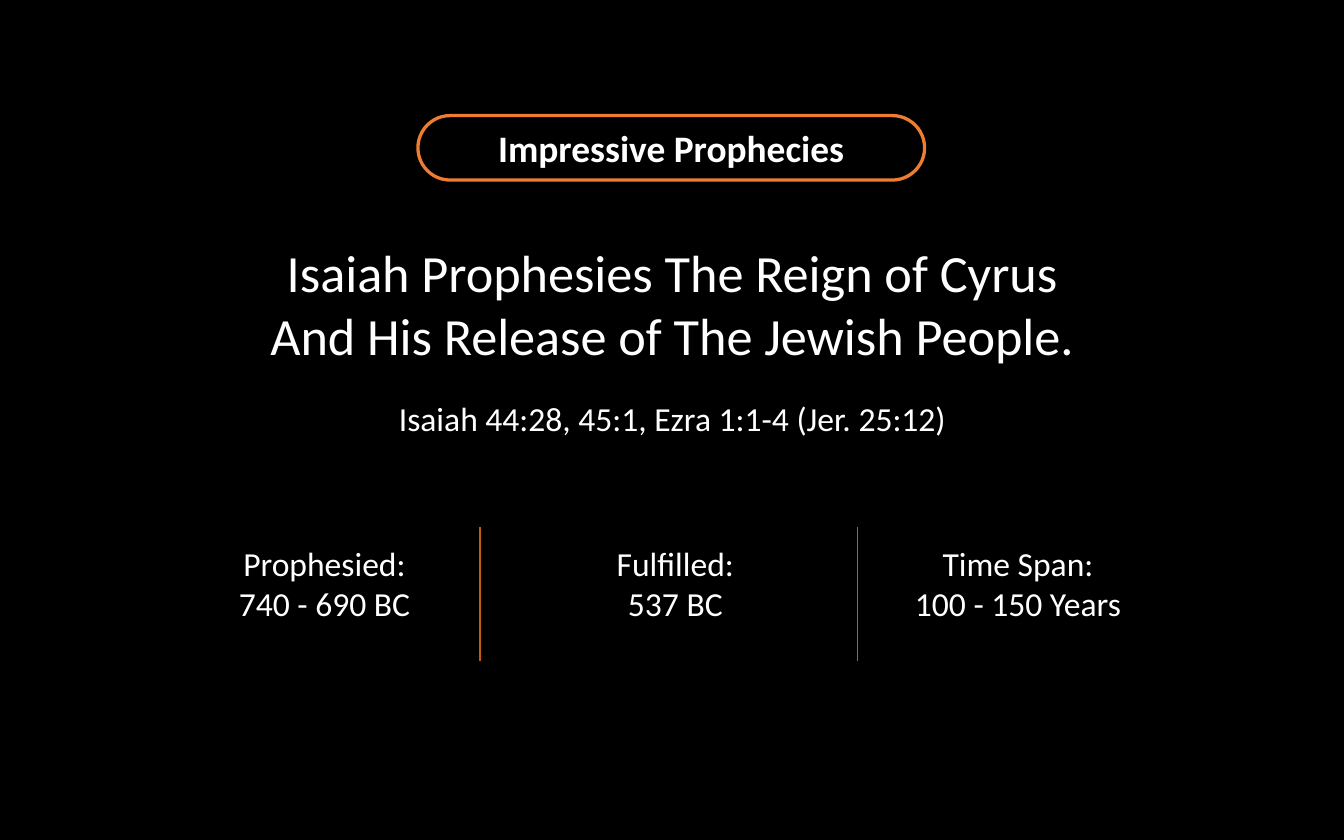
from pptx import Presentation
from pptx import util as u
from pptx.dml import color
from pptx.enum import shapes, text
from pptx.oxml import ns
from lxml import etree

BLACK = color.RGBColor(0x00, 0x00, 0x00)
WHITE = color.RGBColor(0xFF, 0xFF, 0xFF)
ORANGE = color.RGBColor(0xED, 0x7D, 0x31)
RUST = color.RGBColor(0xC5, 0x5A, 0x11)


class Deck:
    font = "Calibri"
    ink = WHITE

    def __init__(self, wide, high):
        self.prs = Presentation()
        self.prs.slide_width = u.Inches(wide)
        self.prs.slide_height = u.Inches(high)
        self.slide = self.prs.slides.add_slide(self.prs.slide_layouts[5])
        fill = self.slide.background.fill
        fill.solid()
        fill.fore_color.rgb = BLACK

    def run(self, para, words, size, bold=False):
        run = para.add_run()
        run.text = words
        run.font.name = self.font
        run.font.size = u.Pt(size)
        run.font.bold = bold
        run.font.color.rgb = self.ink

    def frame(self, shape, anchor):
        """Set wrapping and anchor, and return the centred first paragraph."""
        frame = shape.text_frame
        frame.word_wrap = True
        frame.vertical_anchor = anchor
        para = frame.paragraphs[0]
        para.alignment = text.PP_ALIGN.CENTER
        return para

    def title(self, box, lines, size):
        shape = self.slide.shapes.title
        shape.left, shape.top, shape.width, shape.height = map(u.Inches, box)
        para = self.frame(shape, text.MSO_ANCHOR.TOP)
        shape.text_frame.auto_size = text.MSO_AUTO_SIZE.SHAPE_TO_FIT_TEXT
        for i, line in enumerate(lines):
            if i:
                para.add_line_break()
            self.run(para, line, size)

    def label(self, box, lines, size):
        shape = self.slide.shapes.add_textbox(*map(u.Inches, box))
        para = self.frame(shape, text.MSO_ANCHOR.TOP)
        shape.text_frame.auto_size = text.MSO_AUTO_SIZE.SHAPE_TO_FIT_TEXT
        for i, line in enumerate(lines):
            if i:
                para = shape.text_frame.add_paragraph()
                para.alignment = text.PP_ALIGN.CENTER
            self.run(para, line, size)

    def pill(self, box, words, size):
        shape = self.slide.shapes.add_shape(
            shapes.MSO_SHAPE.ROUNDED_RECTANGLE, *map(u.Inches, box))
        shape.adjustments[0] = 0.5
        shape.shadow.inherit = False
        shape.fill.background()
        shape.line.color.rgb = ORANGE
        shape.line.width = u.Pt(1.75)
        self.run(self.frame(shape, text.MSO_ANCHOR.MIDDLE), words, size, True)

    def rule(self, x, top, end):
        line = self.slide.shapes.add_connector(
            shapes.MSO_CONNECTOR.STRAIGHT,
            *map(u.Inches, (x, top, x, end)))
        line.line.color.rgb = RUST
        line.line.width = u.Pt(1)
        etree.SubElement(line._element.spPr, ns.qn("a:effectLst"))


def main():
    deck = Deck(10, 6.25)
    deck.pill((3.11, 0.86, 3.77, 0.48), "Impressive Prophecies", 20)
    deck.title((0.66, 1.74, 8.68, 1.04),
               ["Isaiah Prophesies The Reign of Cyrus",
                "And His Release of The Jewish People."], 28)
    deck.label((2.66, 2.91, 4.69, 0.4),
               ["Isaiah 44:28, 45:1, Ezra 1:1-4 (Jer. 25:12)"], 18)
    facts = [(1.26, "Prophesied:", "740 - 690 BC"),
             (3.87, "Fulfilled:", "537 BC"),
             (6.42, "Time Span:", "100 - 150 Years")]
    for left, head, value in facts:
        deck.label((left, 3.99, 2.31, 0.71), [head, value], 18)
    for x in (3.57, 6.38):
        deck.rule(x, 3.92, 4.92)
    deck.prs.save("out.pptx")


if __name__ == "__main__":
    main()
